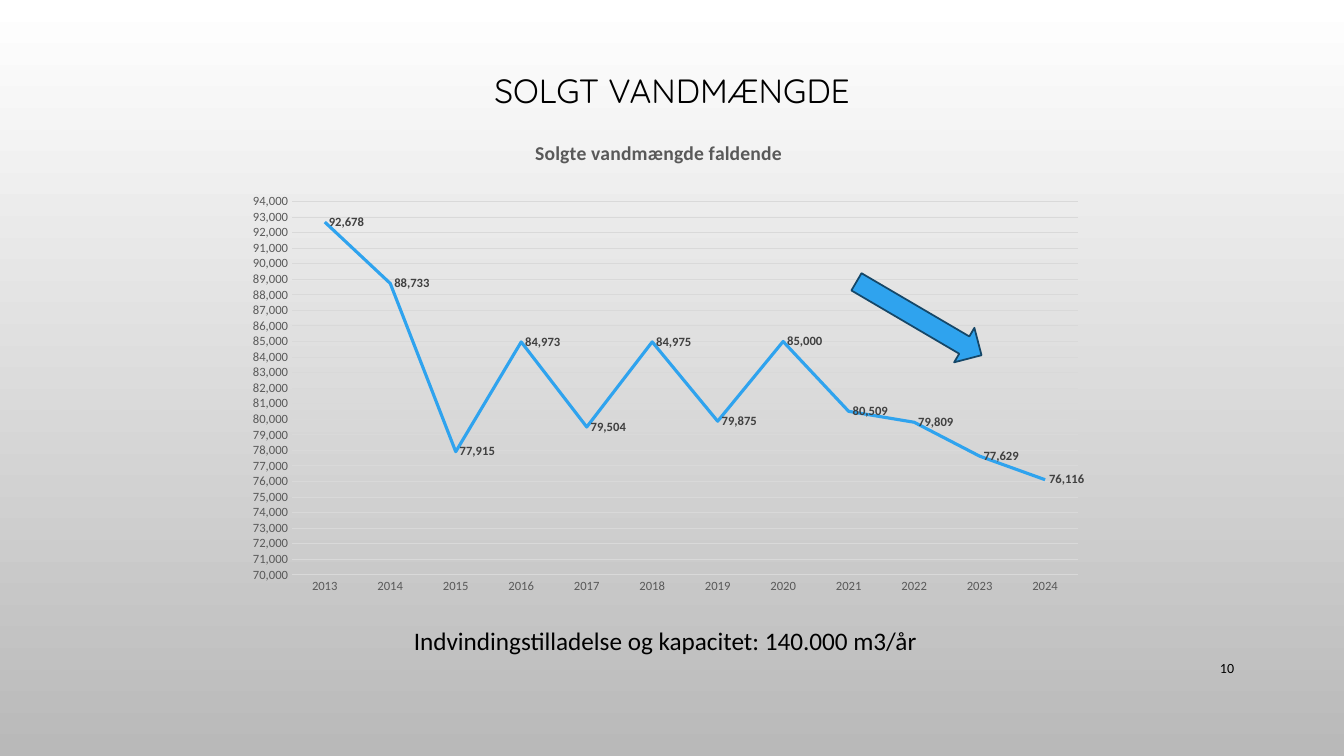
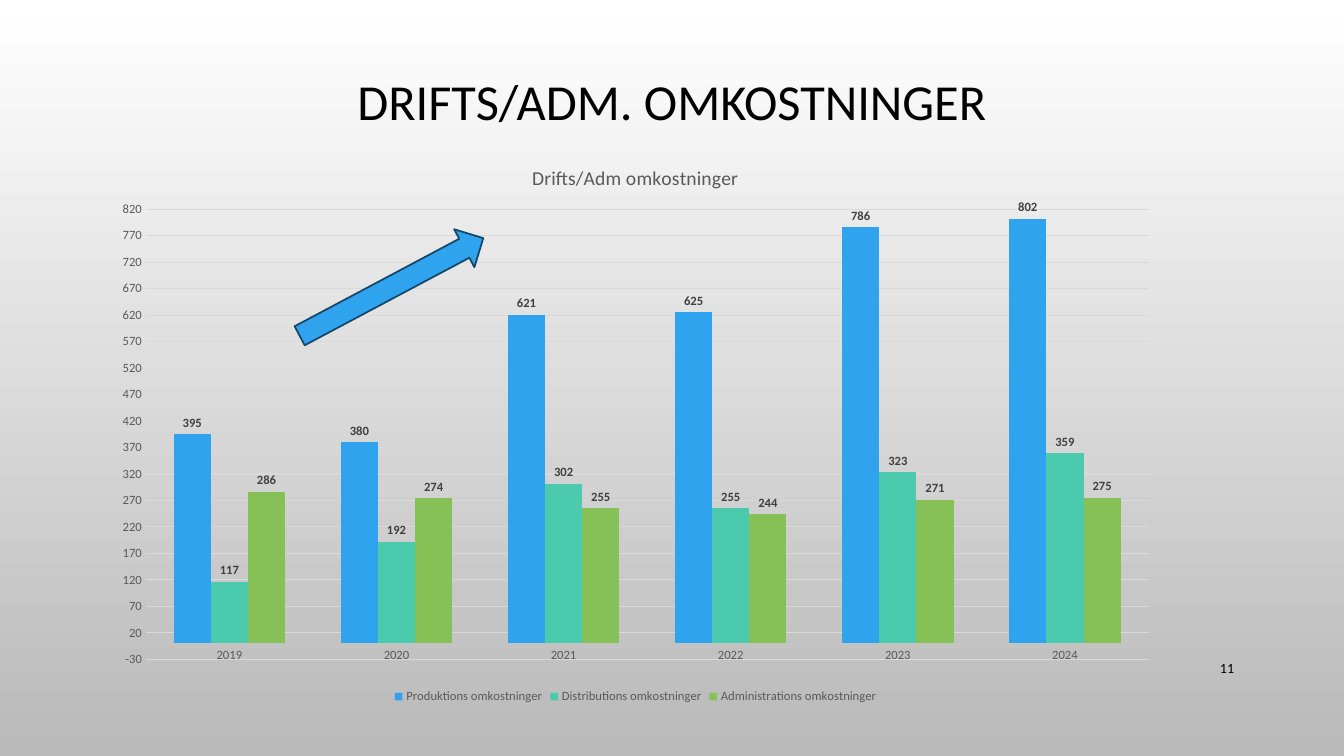
from lxml import etree
from pptx import Presentation
from pptx import util as u
from pptx.chart.data import CategoryChartData
from pptx.dml.color import RGBColor
from pptx.enum import chart as charts, shapes, text
from pptx.oxml.ns import qn

PX = 914400 / 100.8
BLACK = RGBColor(0x00, 0x00, 0x00)
WHITE = RGBColor(0xFF, 0xFF, 0xFF)
SILVER = RGBColor(0xB9, 0xB9, 0xB9)
GRID = RGBColor(0xD9, 0xD9, 0xD9)
AXIS_TEXT = RGBColor(0x59, 0x59, 0x59)
LABEL_TEXT = RGBColor(0x40, 0x40, 0x40)
BLUE = RGBColor(0x2F, 0xA3, 0xEE)
TEAL = RGBColor(0x4B, 0xCA, 0xAD)
GREEN = RGBColor(0x86, 0xC1, 0x57)
NAVY = RGBColor(0x15, 0x47, 0x68)
BODY_FONT = "Calibri"


def emu(*lengths):
    return [u.Emu(round(length * PX)) for length in lengths]


def style_font(font, size, color, bold=False, name=BODY_FONT):
    font.name = name
    font.size = u.Pt(size)
    font.bold = bold
    font.color.rgb = color


def set_layout(element, index, inner=False, **fractions):
    """Place a chart part by fractions (x, y, w, h) of the chart area."""
    for old in element.findall(qn("c:layout")):
        element.remove(old)
    layout = etree.Element(qn("c:layout"))
    manual = etree.SubElement(layout, qn("c:manualLayout"))
    settings = [("layoutTarget", "inner")] if inner else []
    settings += [("xMode", "edge"), ("yMode", "edge"), *fractions.items()]
    for tag, value in settings:
        etree.SubElement(manual, qn(f"c:{tag}")).set("val", str(value))
    element.insert(index, layout)


class Deck:
    def __init__(self):
        self.presentation = Presentation()
        self.presentation.slide_width, self.presentation.slide_height = emu(1344, 756)
        self.slide = None

    def new_slide(self, title, number, title_height, title_size, title_font=BODY_FONT):
        self.slide = self.presentation.slides.add_slide(self.presentation.slide_layouts[6])
        fill = self.slide.background.fill
        fill.gradient()
        fill.gradient_angle = 270
        for stop, color in zip(fill.gradient_stops, (WHITE, SILVER)):
            stop.color.rgb = color
        heading = self.text(title, (101, 69, 1142, title_height), title_size,
                            text.PP_ALIGN.CENTER, text.MSO_ANCHOR.MIDDLE, title_font)
        heading.line_spacing = 0.9
        self.text(str(number), (1159, 648, 85, 40), 10,
                  text.PP_ALIGN.RIGHT, text.MSO_ANCHOR.MIDDLE)

    def text(self, content, box, size, align=text.PP_ALIGN.LEFT,
             anchor=text.MSO_ANCHOR.TOP, font=BODY_FONT):
        frame = self.slide.shapes.add_textbox(*emu(*box)).text_frame
        frame.word_wrap = True
        frame.vertical_anchor = anchor
        frame.text = content
        paragraph = frame.paragraphs[0]
        paragraph.alignment = align
        style_font(paragraph.runs[0].font, size, BLACK, name=font)
        return paragraph

    def arrow(self, preset, box, rotation):
        shape = self.slide.shapes.add_shape(preset, *emu(*box))
        shape.rotation = rotation
        shape.shadow.inherit = False
        shape.fill.solid()
        shape.fill.fore_color.rgb = BLUE
        shape.line.color.rgb = NAVY
        shape.line.width = u.Pt(1.25)

    def chart(self, kind, box, title, categories, series, scale, title_at, plot_at,
              bold=False, number_format="General"):
        """Add a chart; scale is the value axis as (minimum, maximum, step)."""
        data = CategoryChartData(number_format=number_format)
        data.categories = categories
        for name, values in series:
            data.add_series(name, values)
        chart = self.slide.shapes.add_chart(kind, *emu(*box), data).chart
        style_font(chart.font, 10, BLACK)
        chart.has_legend = False

        chart.has_title = True
        frame = chart.chart_title.text_frame
        frame.text = title
        style_font(frame.paragraphs[0].runs[0].font, 14, AXIS_TEXT, bold)
        chart.chart_title.include_in_layout = False
        root = chart.element if hasattr(chart, "element") else chart._chartSpace
        x, y = title_at
        set_layout(root.find(".//" + qn("c:title")), 1, x=x, y=y)
        x, y, w, h = plot_at
        set_layout(root.find(".//" + qn("c:plotArea")), 0, inner=True, x=x, y=y, w=w, h=h)

        for axis in (chart.category_axis, chart.value_axis):
            axis.major_tick_mark = axis.minor_tick_mark = charts.XL_TICK_MARK.NONE
            axis.format.line.fill.background()
            style_font(axis.tick_labels.font, 9, AXIS_TEXT)
        axis = chart.value_axis
        axis.minimum_scale, axis.maximum_scale, axis.major_unit = scale
        axis.tick_labels.number_format = number_format
        axis.tick_labels.number_format_is_linked = False
        axis.has_major_gridlines = True
        self.thin_line(axis.major_gridlines.format.line)

        plot = chart.plots[0]
        plot.vary_by_categories = False
        plot.has_data_labels = True
        labels = plot.data_labels
        labels.show_value = True
        labels.number_format = number_format
        labels.number_format_is_linked = False
        style_font(labels.font, 9, LABEL_TEXT, bold)
        return chart

    @staticmethod
    def thin_line(line):
        line.color.rgb = GRID
        line.width = u.Pt(0.75)

    def line_chart(self, *args, **options):
        chart = self.chart(charts.XL_CHART_TYPE.LINE, *args, **options)
        self.thin_line(chart.category_axis.format.line)
        plot = chart.plots[0]
        plot.data_labels.position = charts.XL_LABEL_POSITION.RIGHT
        for series in plot.series:
            series.smooth = False
            series.marker.style = charts.XL_MARKER_STYLE.NONE
            series.format.line.color.rgb = BLUE
            series.format.line.width = u.Pt(2.25)

    def column_chart(self, *args, **options):
        chart = self.chart(charts.XL_CHART_TYPE.COLUMN_CLUSTERED, *args, **options)
        plot = chart.plots[0]
        plot.gap_width = 150
        plot.overlap = 0
        plot.data_labels.position = charts.XL_LABEL_POSITION.OUTSIDE_END
        for series, color in zip(plot.series, (BLUE, TEAL, GREEN)):
            series.format.fill.solid()
            series.format.fill.fore_color.rgb = color
        chart.has_legend = True
        chart.legend.position = charts.XL_LEGEND_POSITION.BOTTOM
        chart.legend.include_in_layout = False
        style_font(chart.legend.font, 9, AXIS_TEXT)


def years(first, last):
    return [str(year) for year in range(first, last + 1)]


def sold_water(deck):
    deck.new_slide("SOLGT VANDMÆNGDE", 10, 47, 24, "Quicksand")
    volumes = (92678, 88733, 77915, 84973, 79504, 84975,
               79875, 85000, 80509, 79809, 77629, 76116)
    deck.line_chart((188, 115, 929, 518), "Solgte vandmængde faldende",
                    years(2013, 2024), [("Series 1", volumes)], (70000, 94000, 1000),
                    title_at=(0.37, 0.04), plot_at=(0.112, 0.167, 0.846, 0.721),
                    bold=True, number_format="#,##0")
    deck.text("Indvindingstilladelse og kapacitet: 140.000 m3/år", (404, 620, 534, 40), 18)
    deck.arrow(shapes.MSO_SHAPE.DOWN_ARROW, (899, 246, 40, 145), 300.4)


def running_costs(deck):
    deck.new_slide("DRIFTS/ADM. OMKOSTNINGER", 11, 71, 36)
    costs = [
        ("Produktions omkostninger", (395, 380, 621, 625, 786, 802)),
        ("Distributions omkostninger", (117, 192, 302, 255, 323, 359)),
        ("Administrations omkostninger", (286, 274, 255, 244, 271, 275)),
    ]
    deck.column_chart((101, 138, 1069, 570), "Drifts/Adm omkostninger",
                      years(2019, 2024), costs, (-30, 820, 50),
                      title_at=(0.4, 0.04), plot_at=(0.042, 0.125, 0.938, 0.79))
    chart = deck.slide.shapes[-1].chart
    chart.plots[0].data_labels.font.bold = True
    deck.arrow(shapes.MSO_SHAPE.UP_ARROW, (370, 183, 43, 208), 62)


def main():
    deck = Deck()
    sold_water(deck)
    running_costs(deck)
    deck.presentation.save("out.pptx")


if __name__ == "__main__":
    main()
